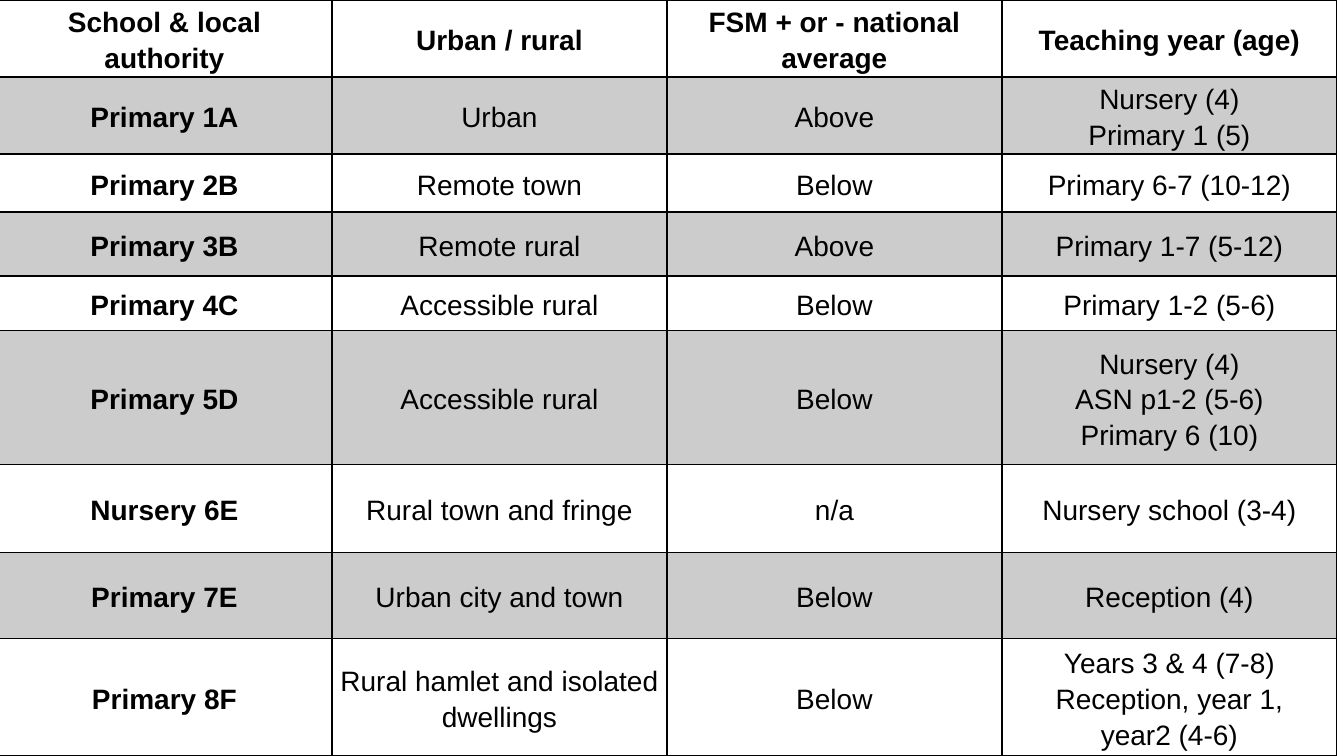
from lxml import etree
from pptx import Presentation
from pptx import util as u
from pptx.dml.color import RGBColor
from pptx.enum import text
from pptx.oxml import ns

HEADINGS = ("School & local authority", "Urban / rural",
            "FSM + or - national average", "Teaching year (age)")
SCHOOLS = [
    ("Primary 1A", "Urban", "Above", "Nursery (4)\nPrimary 1 (5)"),
    ("Primary 2B", "Remote town", "Below", "Primary 6-7 (10-12)"),
    ("Primary 3B", "Remote rural", "Above", "Primary 1-7 (5-12)"),
    ("Primary 4C", "Accessible rural", "Below", "Primary 1-2 (5-6)"),
    ("Primary 5D", "Accessible rural", "Below",
     "Nursery (4)\nASN p1-2 (5-6)\nPrimary 6 (10)"),
    ("Nursery 6E", "Rural town and fringe", "n/a", "Nursery school (3-4)"),
    ("Primary 7E", "Urban city and town", "Below", "Reception (4)"),
    ("Primary 8F", "Rural hamlet and isolated dwellings", "Below",
     "Years 3 & 4 (7-8)\nReception, year 1,\nyear2 (4-6)"),
]
ROW_HEIGHTS = [77, 77, 58, 64, 55, 134, 88, 86, 117]
COLUMN_WIDTH = 335
TABLE_LEFT = -3
PAGE_SIZE = (1344, 756)
PX = u.Inches(1) / 100.8
BLACK = "000000"
BAND_ALPHA = 20


def px(length):
    return u.Emu(round(length * PX))


def color(value):
    return RGBColor.from_string(value)


def set_all(target, values):
    for name, value in values.items():
        setattr(target, name, value)


def add_element(parent, tag, **attributes):
    return etree.SubElement(parent, ns.qn(tag), attributes)


def add_borders(cell, is_heading):
    """Rule every side, with a heavier line under and over the heading edge."""
    properties = cell._tc.get_or_add_tcPr()
    for side in ("L", "R", "T", "B"):
        points = 2 if is_heading and side == "B" else 1
        line = add_element(properties, f"a:ln{side}", w=str(u.Pt(points)))
        fill = add_element(line, "a:solidFill")
        add_element(fill, "a:srgbClr", val=BLACK)


def fill_cell(cell, shaded):
    if not shaded:
        cell.fill.background()
        return
    cell.fill.solid()
    cell.fill.fore_color.rgb = color(BLACK)
    tint = cell._tc.tcPr.find(".//" + ns.qn("a:solidFill") + "[last()]")
    tint = cell._tc.tcPr.findall(ns.qn("a:solidFill"))[0]
    add_element(tint[0], "a:alpha", val=str(BAND_ALPHA * 1000))


def write_cell(cell, words, bold):
    set_all(cell, {"margin_left": px(7), "margin_right": px(7),
                   "margin_top": 0, "margin_bottom": 0,
                   "vertical_anchor": text.MSO_ANCHOR.MIDDLE})
    cell.text_frame.text = words
    for para in cell.text_frame.paragraphs:
        set_all(para, {"alignment": text.PP_ALIGN.CENTER, "line_spacing": 1.15})
        for span in para.runs:
            set_all(span.font, {"name": "Arial", "size": u.Pt(20), "bold": bold})
            span.font.color.rgb = color(BLACK)


def add_school_table(page):
    rows = [HEADINGS, *SCHOOLS]
    columns = len(HEADINGS)
    frame = page.shapes.add_table(
        len(rows), columns, px(TABLE_LEFT), 0,
        px(COLUMN_WIDTH * columns), px(sum(ROW_HEIGHTS)))
    table = frame.table
    set_all(table, {"first_row": False, "horz_banding": False})
    for column in table.columns:
        column.width = px(COLUMN_WIDTH)
    for row_index, (row, height) in enumerate(zip(rows, ROW_HEIGHTS)):
        table.rows[row_index].height = px(height)
        for column_index, words in enumerate(row):
            cell = table.cell(row_index, column_index)
            is_heading = row_index == 0
            write_cell(cell, words, bold=is_heading or column_index == 0)
            add_borders(cell, is_heading)
            fill_cell(cell, shaded=row_index % 2 == 1)


def main():
    deck = Presentation()
    deck.slide_width, deck.slide_height = map(px, PAGE_SIZE)
    page = deck.slides.add_slide(deck.slide_layouts[6])
    add_school_table(page)
    deck.save("out.pptx")


if __name__ == "__main__":
    main()
